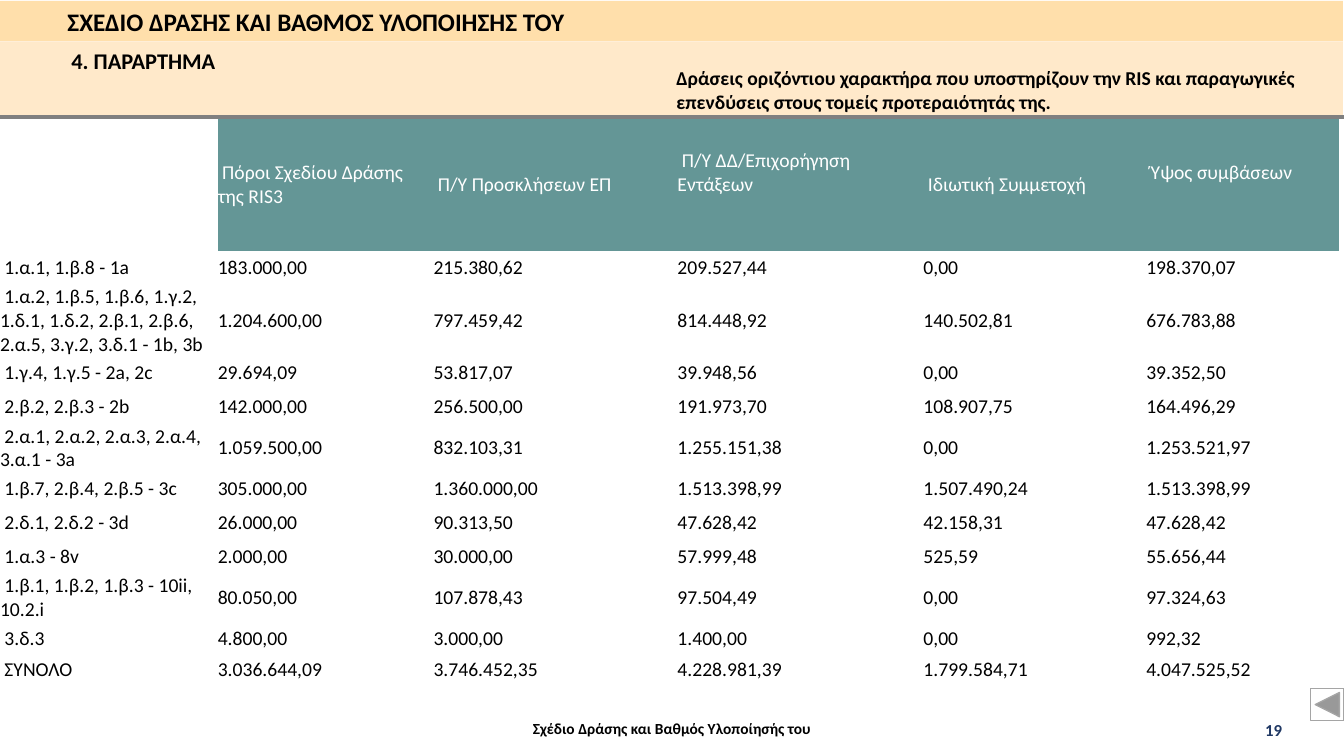
from dataclasses import dataclass

from pptx import Presentation
from pptx.dml.color import RGBColor
from pptx.enum.shapes import MSO_CONNECTOR as Connector, MSO_SHAPE as Preset
from pptx.enum.text import MSO_ANCHOR as Anchor, MSO_AUTO_SIZE as AutoSize, PP_ALIGN as Align
from pptx.oxml.ns import qn
from pptx.oxml.xmlchemy import OxmlElement
from pptx.util import Inches, Pt


@dataclass(frozen=True)
class Theme:
    font: str = "Calibri"
    ink: str = "000000"
    white: str = "FFFFFF"
    navy: str = "203864"
    teal: str = "649696"
    title_band: str = "FFDFAB"
    section_band: str = "FFE9CA"
    rule: str = "808080"
    button_line: str = "A5A5A5"
    title: int = 18
    section: int = 16
    body: int = 14
    page_number: int = 12
    footer: int = 11


THEME = Theme()
NO_GRID_STYLE = "{2D5ABB26-0587-4C30-8999-92F81FD0307C}"

COLUMN_WIDTHS = [2.16, 2.14, 2.42, 2.44, 2.21, 1.91]
HEADER_HEIGHT, ROW_HEIGHT = 1.31, 0.34
ROW_HEIGHTS = {2: 0.68, 5: 0.45, 9: 0.45, 11: 0.28}  # rows that differ from ROW_HEIGHT

# Header text and the space kept free below it
HEADERS = [
    ("Πόροι Σχεδίου Δράσης της RIS3", 0),
    ("Π/Υ Προσκλήσεων ΕΠ", 0),
    ("Π/Υ ΔΔ/Επιχορήγηση Εντάξεων", 0.24),
    ("Ιδιωτική Συμμετοχή", 0),
    ("Ύψος συμβάσεων", 0.24),
]
ACTIONS = [
    ("1.α.1, 1.β.8 - 1a", "183.000,00", "215.380,62", "209.527,44", "0,00", "198.370,07"),
    ("1.α.2, 1.β.5, 1.β.6, 1.γ.2, 1.δ.1, 1.δ.2, 2.β.1, 2.β.6, 2.α.5, 3.γ.2, 3.δ.1 - 1b, 3b",
     "1.204.600,00", "797.459,42", "814.448,92", "140.502,81", "676.783,88"),
    ("1.γ.4, 1.γ.5 - 2a, 2c", "29.694,09", "53.817,07", "39.948,56", "0,00", "39.352,50"),
    ("2.β.2, 2.β.3 - 2b", "142.000,00", "256.500,00", "191.973,70", "108.907,75", "164.496,29"),
    ("2.α.1, 2.α.2, 2.α.3, 2.α.4, 3.α.1 - 3a",
     "1.059.500,00", "832.103,31", "1.255.151,38", "0,00", "1.253.521,97"),
    ("1.β.7, 2.β.4, 2.β.5 - 3c",
     "305.000,00", "1.360.000,00", "1.513.398,99", "1.507.490,24", "1.513.398,99"),
    ("2.δ.1, 2.δ.2 - 3d", "26.000,00", "90.313,50", "47.628,42", "42.158,31", "47.628,42"),
    ("1.α.3 - 8v", "2.000,00", "30.000,00", "57.999,48", "525,59", "55.656,44"),
    ("1.β.1, 1.β.2, 1.β.3 - 10ii, 10.2.i",
     "80.050,00", "107.878,43", "97.504,49", "0,00", "97.324,63"),
    ("3.δ.3", "4.800,00", "3.000,00", "1.400,00", "0,00", "992,32"),
    ("ΣΥΝΟΛΟ", "3.036.644,09", "3.746.452,35", "4.228.981,39", "1.799.584,71", "4.047.525,52"),
]


def rgb(color):
    return RGBColor.from_string(color)


def add_span(para, text, size, color, bold=False):
    span = para.add_run()
    span.text = text
    span.font.name = THEME.font
    span.font.size = Pt(size)
    span.font.bold = bold
    span.font.color.rgb = rgb(color)


def add_label(page, text, place, size, color=THEME.ink, align=Align.LEFT, wrap=True, fitted=True):
    """Bold text box; a box that is not fitted has no margins."""
    frame = page.shapes.add_textbox(*map(Inches, place)).text_frame
    frame.word_wrap = wrap
    if fitted:
        frame.auto_size = AutoSize.SHAPE_TO_FIT_TEXT
    else:
        frame.margin_left = frame.margin_right = frame.margin_top = frame.margin_bottom = 0
    para = frame.paragraphs[0]
    para.alignment = align
    add_span(para, text, size, color, bold=True)


def add_preset(page, preset, place, fill, line=None):
    shape = page.shapes.add_shape(preset, *map(Inches, place))
    shape.shadow.inherit = False
    shape.fill.solid()
    shape.fill.fore_color.rgb = rgb(fill)
    if line:
        shape.line.color.rgb = rgb(line)
        shape.line.width = Pt(1)
    else:
        shape.line.fill.background()


def add_rule(page, left, right, top):
    rule = page.shapes.add_connector(
        Connector.STRAIGHT, Inches(left), Inches(top), Inches(right), Inches(top))
    rule.line.color.rgb = rgb(THEME.rule)
    rule.line.width = Pt(3)
    rule.element.spPr.append(OxmlElement("a:effectLst"))


def fill_cell(cell, text, color=THEME.ink, fill=None, below=0):
    cell.vertical_anchor = Anchor.MIDDLE
    cell.margin_left = cell.margin_right = cell.margin_top = 0
    cell.margin_bottom = Inches(below)
    if fill:
        cell.fill.solid()
        cell.fill.fore_color.rgb = rgb(fill)
    else:
        cell.fill.background()
    if text:
        add_span(cell.text_frame.paragraphs[0], text, THEME.body, color)


def add_budget_table(page, left, top):
    heights = [HEADER_HEIGHT] + [
        ROW_HEIGHTS.get(row, ROW_HEIGHT) for row in range(1, len(ACTIONS) + 1)]
    frame = page.shapes.add_table(
        len(heights), len(COLUMN_WIDTHS), Inches(left), Inches(top),
        Inches(sum(COLUMN_WIDTHS)), Inches(sum(heights)))
    frame.element.find(".//" + qn("a:tableStyleId")).text = NO_GRID_STYLE
    table = frame.table
    table.first_row = table.horz_banding = False
    for column, width in zip(table.columns, COLUMN_WIDTHS):
        column.width = Inches(width)
    for row, height in zip(table.rows, heights):
        row.height = Inches(height)

    # Header row, with an empty corner
    fill_cell(table.cell(0, 0), "")
    for column, (header, below) in enumerate(HEADERS, 1):
        fill_cell(table.cell(0, column), f" {header}", THEME.white, THEME.teal, below)

    # Actions and their amounts
    for row, (action, *amounts) in enumerate(ACTIONS, 1):
        for column, text in enumerate([f" {action}", *amounts]):
            fill_cell(table.cell(row, column), text)


def main():
    deck = Presentation()
    deck.slide_width, deck.slide_height = Inches(13.33), Inches(7.5)
    page = deck.slides.add_slide(deck.slide_layouts[6])

    # Footer
    add_label(page, "Σχέδιο Δράσης και Βαθμός Υλοποίησής του", (3.47, 7.13, 6.39, 0.3),
              THEME.footer, align=Align.CENTER, fitted=False)
    add_label(page, "19", (12.45, 7.09, 0.64, 0.3), THEME.page_number, THEME.navy)

    # Heading bands
    add_preset(page, Preset.RECTANGLE, (-0.01, 0.01, 13.33, 0.4), THEME.title_band)
    add_preset(page, Preset.RECTANGLE, (-0.01, 0.41, 13.33, 0.75), THEME.section_band)
    add_rule(page, -0.01, 13.33, 1.16)
    add_label(page, "ΣΧΕΔΙΟ ΔΡΑΣΗΣ ΚΑΙ ΒΑΘΜΟΣ ΥΛΟΠΟΙΗΣΗΣ ΤΟΥ", (0, 0.01, 6.27, 0.4),
              THEME.title, align=Align.CENTER)
    add_label(page, "4. ΠΑΡΑΡΤΗΜΑ", (0.61, 0.42, 1.65, 0.37), THEME.section, wrap=False)
    add_label(page, "Δράσεις οριζόντιου χαρακτήρα που υποστηρίζουν την RIS και παραγωγικές "
              "επενδύσεις στους τομείς προτεραιότητάς της.", (6.61, 0.61, 6.68, 0.57), THEME.body)

    # Back button and table
    add_preset(page, Preset.ACTION_BUTTON_BACK_OR_PREVIOUS, (13, 6.83, 0.33, 0.32),
               THEME.white, THEME.button_line)
    add_budget_table(page, 0, 1.18)

    deck.save("out.pptx")


if __name__ == "__main__":
    main()
